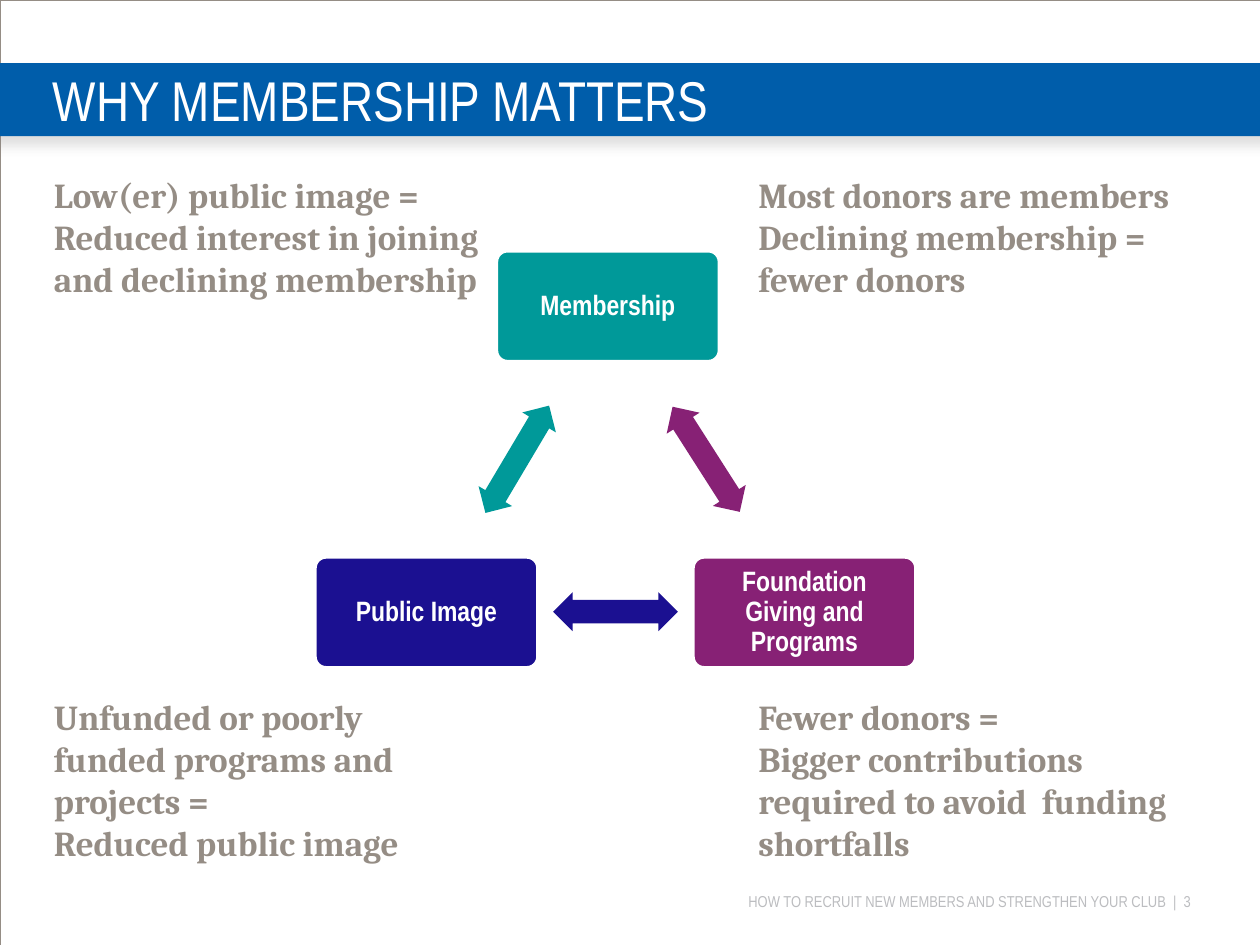
from lxml.etree import SubElement as Sub
from pptx import Presentation
from pptx.dml.color import RGBColor as RGB
from pptx.enum.shapes import MSO_SHAPE as Shape
from pptx.enum.text import MSO_ANCHOR as Anchor, PP_ALIGN as Align
from pptx.oxml.ns import qn
from pptx.util import Pt

PX = 9144  # EMU; 100 px to the inch
HUES = {"blue": "005DAA", "taupe": "958D85", "white": "FFFFFF", "gray": "BCBDC0",
        "shade": "808080", "teal": "009999", "navy": "1B1091", "plum": "872175"}
SANS, SERIF = "Arial Narrow", "Cambria"

NOTES = [
    ((592, 133, 402, 111),
     "Most donors are members\nDeclining membership = fewer donors"),
    ((592, 547, 392, 145),
     "Fewer donors =\nBigger contributions required to avoid  funding shortfalls"),
    ((33, 547, 342, 145),
     "Unfunded or poorly\vfunded programs and projects =\vReduced public image"),
    ((33, 133, 367, 145),
     "Low(er) public image = Reduced interest in joining and declining membership"),
]
# Label, colour, and place inside the cycle's box
NODES = [("Membership", "teal", 144, 0),
         ("Public Image", "navy", 0, 243),
         ("Foundation Giving and Programs", "plum", 300, 243)]
ARROWS = [("teal", 111, 150, 120.7), ("navy", 189, 271, 0), ("plum", 261, 150, 237.4)]


def px(*sizes):
    return [size * PX for size in sizes]


def hue(name):
    return RGB.from_string(HUES[name])


def style(frame, font, size, color, bold=False, align=Align.LEFT):
    frame.word_wrap = True
    for para in frame.paragraphs:
        para.alignment = align
        for run in para.runs:
            run.font.name, run.font.size, run.font.bold = font, Pt(size), bold
            run.font.color.rgb = hue(color)


def inset(frame, gap):
    frame.margin_left = frame.margin_right = gap * PX
    frame.margin_top = frame.margin_bottom = gap * PX


def add_box(slide, kind, box, fill=None, line=None, width=1):
    shape = slide.shapes.add_shape(kind, *px(*box))
    shape.shadow.inherit = False
    if fill:
        shape.fill.solid()
        shape.fill.fore_color.rgb = hue(fill)
    else:
        shape.fill.background()
    if line:
        shape.line.color.rgb = hue(line)
        shape.line.width = Pt(width)
    else:
        shape.line.fill.background()
    return shape


def add_text(slide, box, text):
    frame = slide.shapes.add_textbox(*px(*box)).text_frame
    frame.text = text
    return frame


def cast_shadow(shape):
    effects = shape._element.spPr.find(qn("a:effectLst"))
    cast = Sub(effects, qn("a:outerShdw"), blurRad=str(Pt(7)), dist=str(Pt(4.8)),
               dir="5400000", algn="t", rotWithShape="0")
    color = Sub(cast, qn("a:srgbClr"), val=HUES["shade"])
    Sub(color, qn("a:alpha"), val="25000")


def add_header(slide, box, text):
    left, top, wide, high = box
    cast_shadow(add_box(slide, Shape.RECTANGLE, (left - 8, top, wide + 17, high), "blue"))
    title = slide.shapes.title
    title.left, title.top, title.width, title.height = px(left + 42, top, wide - 42, high)
    frame = title.text_frame
    frame.text = text
    frame.vertical_anchor = Anchor.MIDDLE
    inset(frame, 0)
    style(frame, SANS, 32, "white")
    slide.shapes._spTree.append(title._element)  # in front of the band


def add_footer(slide, box, text):
    frame = add_text(slide, box, text)
    inset(frame, 0)
    style(frame, SANS, 9, "gray", align=Align.RIGHT)


def add_cycle(slide, left, top):
    for text, color, x, y in NODES:
        node = add_box(slide, Shape.ROUNDED_RECTANGLE, (left + x, top + y, 177, 88),
                       color, "white", 2)
        node.adjustments[0] = 0.1
        frame = node.text_frame
        frame.text = text
        frame.vertical_anchor = Anchor.MIDDLE
        inset(frame, 10)
        style(frame, SANS, 16, "white", True, Align.CENTER)
        frame.paragraphs[0].line_spacing = 0.9
    for color, x, y, turn in ARROWS:
        arrow = add_box(slide, Shape.LEFT_RIGHT_ARROW, (left + x, top + y, 99, 31), color)
        arrow.adjustments[0], arrow.adjustments[1] = 0.6, 0.5
        arrow.rotation = turn


def main():
    deck = Presentation()
    deck.slide_width, deck.slide_height = px(1000, 750)
    slide = deck.slides.add_slide(deck.slide_layouts[5])
    add_footer(slide, (525, 708, 420, 15),
               "HOW TO RECRUIT NEW MEMBERS AND STRENGTHEN YOUR CLUB  |  3")
    add_box(slide, Shape.RECTANGLE, (0, 0, 1000, 750), line="taupe", width=0.13)
    add_header(slide, (0, 50, 1000, 58), "WHY MEMBERSHIP MATTERS")
    for box, text in NOTES:
        style(add_text(slide, box, text), SERIF, 20, "taupe", True)
    add_cycle(slide, 250, 199)
    deck.save("out.pptx")


if __name__ == "__main__":
    main()
